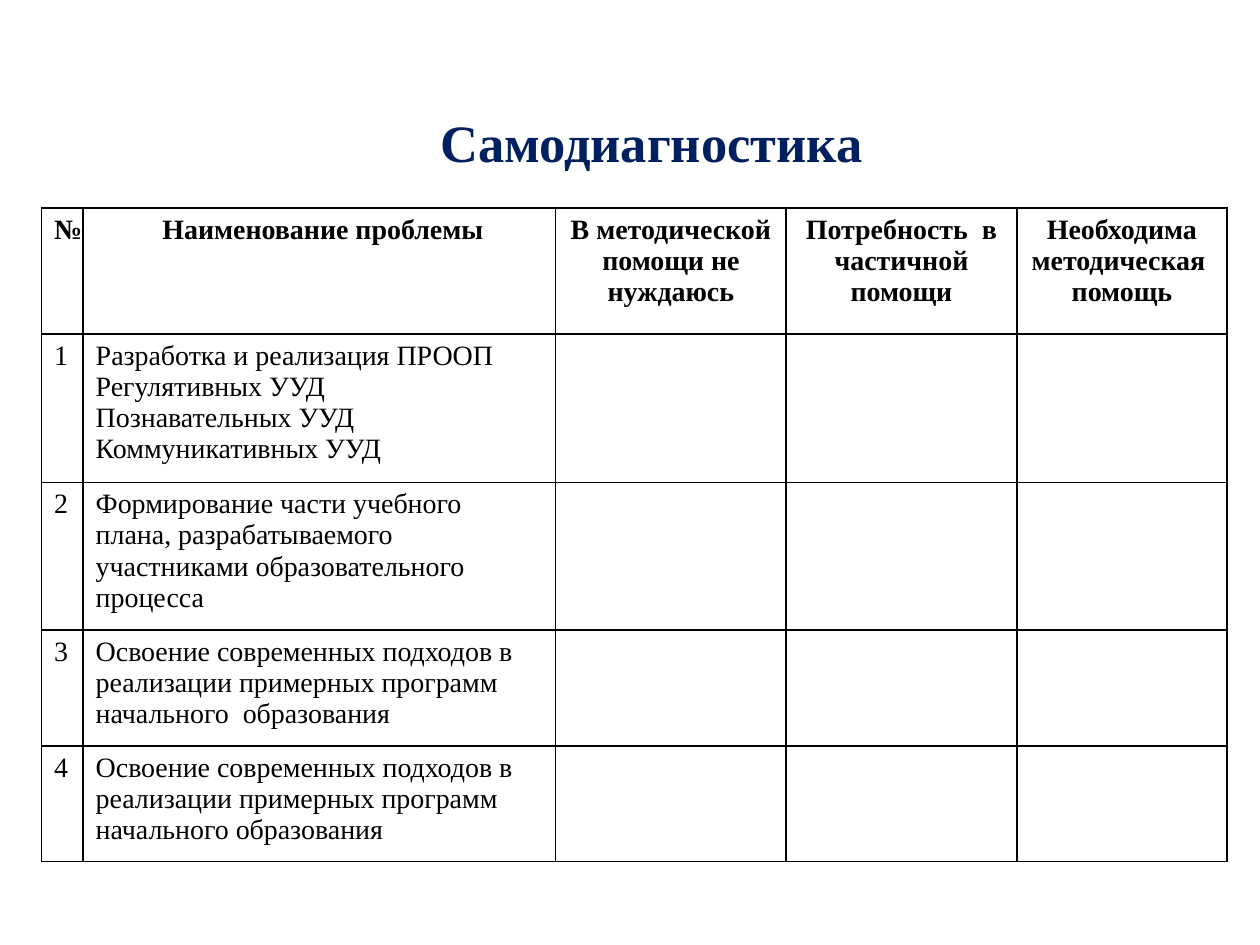
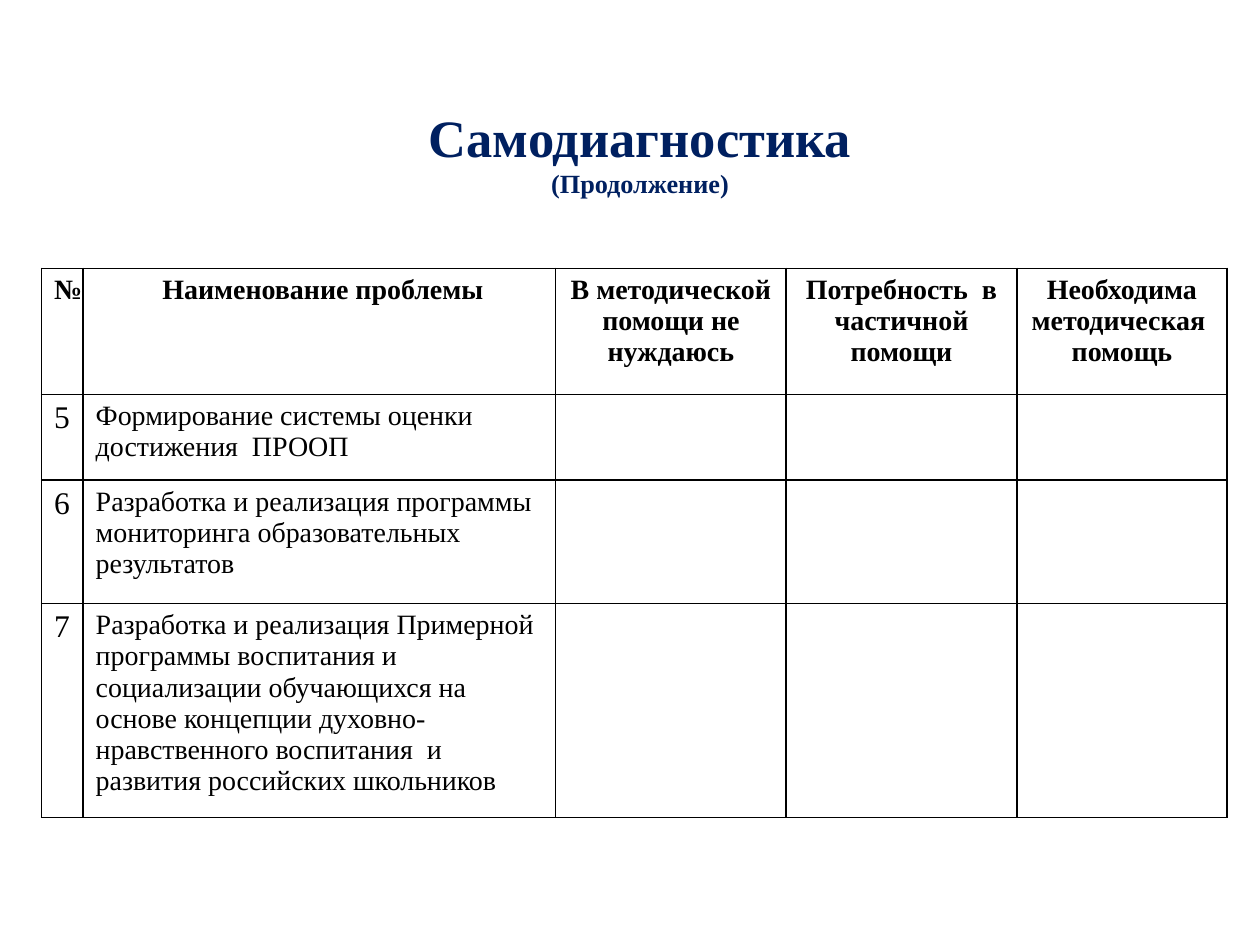
from lxml.etree import SubElement
from pptx import Presentation
from pptx.dml.color import RGBColor
from pptx.enum.text import MSO_ANCHOR, MSO_AUTO_SIZE, PP_ALIGN
from pptx.oxml.ns import qn
from pptx.util import Inches, Pt

COLOURS = {"title": "002060", "text": "000000", "border": "000000", "cell": "FFFFFF"}
FONT = "Times New Roman"
TABLE_LEFT = 0.33
COLUMN_WIDTHS = [0.33, 3.75, 1.83, 1.83, 1.67]
HEADER_HEIGHT = 1
HEADERS = [
    "№",
    " Наименование проблемы",
    "В методической помощи не нуждаюсь",
    "Потребность  в частичной помощи",
    "Необходима методическая  помощь",
]

# Each problem: row height, then its wording, one entry per paragraph.
SLIDES = [
    {
        "title_at": (0.42, 0.75),
        "subtitle": None,
        "table_top": 1.65,
        "first_number": 1,
        "number_size": 16,
        "problems": [
            (1.18, ["Разработка и реализация ПРООП", "Регулятивных УУД",
                    "Познавательных УУД", "Коммуникативных УУД"]),
            (1.17, ["Формирование части учебного  плана, разрабатываемого "
                    "участниками образовательного процесса"]),
            (0.92, ["Освоение современных подходов в реализации примерных "
                    "программ начального  образования"]),
            (0.92, ["Освоение современных подходов в реализации примерных "
                    "программ начального образования"]),
        ],
    },
    {
        "title_at": (0.33, 0.83),
        "subtitle": "(Продолжение)",
        "table_top": 2.13,
        "first_number": 5,
        "number_size": 18,
        "problems": [
            (0.68, ["Формирование системы оценки достижения  ПРООП"]),
            (0.98, ["Разработка и реализация программы мониторинга "
                    "образовательных результатов"]),
            (1.7, ["Разработка и реализация Примерной программы воспитания и "
                   "социализации обучающихся на основе концепции "
                   "духовно-нравственного воспитания  и развития российских "
                   "школьников"]),
        ],
    },
]


def write(paragraph, text, size=16, bold=False, colour="text", align=PP_ALIGN.LEFT):
    """Append one formatted run to the paragraph."""
    paragraph.alignment = align
    span = paragraph.add_run()
    span.text = text
    span.font.name = FONT
    span.font.size = Pt(size)
    span.font.bold = bold
    span.font.color.rgb = RGBColor.from_string(COLOURS[colour])


def style_cell(cell):
    """Give the cell a thin border on each side and a plain fill."""
    properties = cell._tc.get_or_add_tcPr()
    for side in ("a:lnL", "a:lnR", "a:lnT", "a:lnB"):
        line = SubElement(properties, qn(side), w=str(Pt(1)))
        fill = SubElement(line, qn("a:solidFill"))
        SubElement(fill, qn("a:srgbClr"), val=COLOURS["border"])
    cell.fill.solid()
    cell.fill.fore_color.rgb = RGBColor.from_string(COLOURS["cell"])


deck = Presentation()
deck.slide_width = Inches(10)
deck.slide_height = Inches(7.5)
title_only = deck.slide_layouts[5]

for content in SLIDES:
    page = deck.slides.add_slide(title_only)

    title = page.shapes.title
    title.left, title.top = map(Inches, content["title_at"])
    title.width, title.height = Inches(9.5), Inches(0.75)
    title.text_frame.auto_size = MSO_AUTO_SIZE.NONE
    title.text_frame.vertical_anchor = MSO_ANCHOR.MIDDLE
    heading = title.text_frame.paragraphs[0]
    title_format = {"bold": True, "colour": "title", "align": PP_ALIGN.CENTER}
    write(heading, "Самодиагностика", size=30, **title_format)
    if content["subtitle"]:
        heading.add_line_break()
        write(heading, content["subtitle"], size=15, **title_format)

    row_heights = [HEADER_HEIGHT] + [height for height, _ in content["problems"]]
    table = page.shapes.add_table(
        len(row_heights), len(COLUMN_WIDTHS),
        Inches(TABLE_LEFT), Inches(content["table_top"]),
        Inches(sum(COLUMN_WIDTHS)), Inches(sum(row_heights)),
    ).table
    table.first_row = False
    table.horz_banding = False
    for column, width in zip(table.columns, COLUMN_WIDTHS):
        column.width = Inches(width)
    for row, height in zip(table.rows, row_heights):
        row.height = Inches(height)
    for cell in table.iter_cells():
        style_cell(cell)

    for index, header in enumerate(HEADERS):
        paragraph = table.cell(0, index).text_frame.paragraphs[0]
        write(paragraph, header, bold=True, align=PP_ALIGN.CENTER)

    for row, (_, lines) in enumerate(content["problems"], start=1):
        number = content["first_number"] + row - 1
        write(table.cell(row, 0).text_frame.paragraphs[0], str(number),
              size=content["number_size"])
        frame = table.cell(row, 1).text_frame
        for index, line in enumerate(lines):
            paragraph = frame.add_paragraph() if index else frame.paragraphs[0]
            write(paragraph, line)

deck.save("out.pptx")
